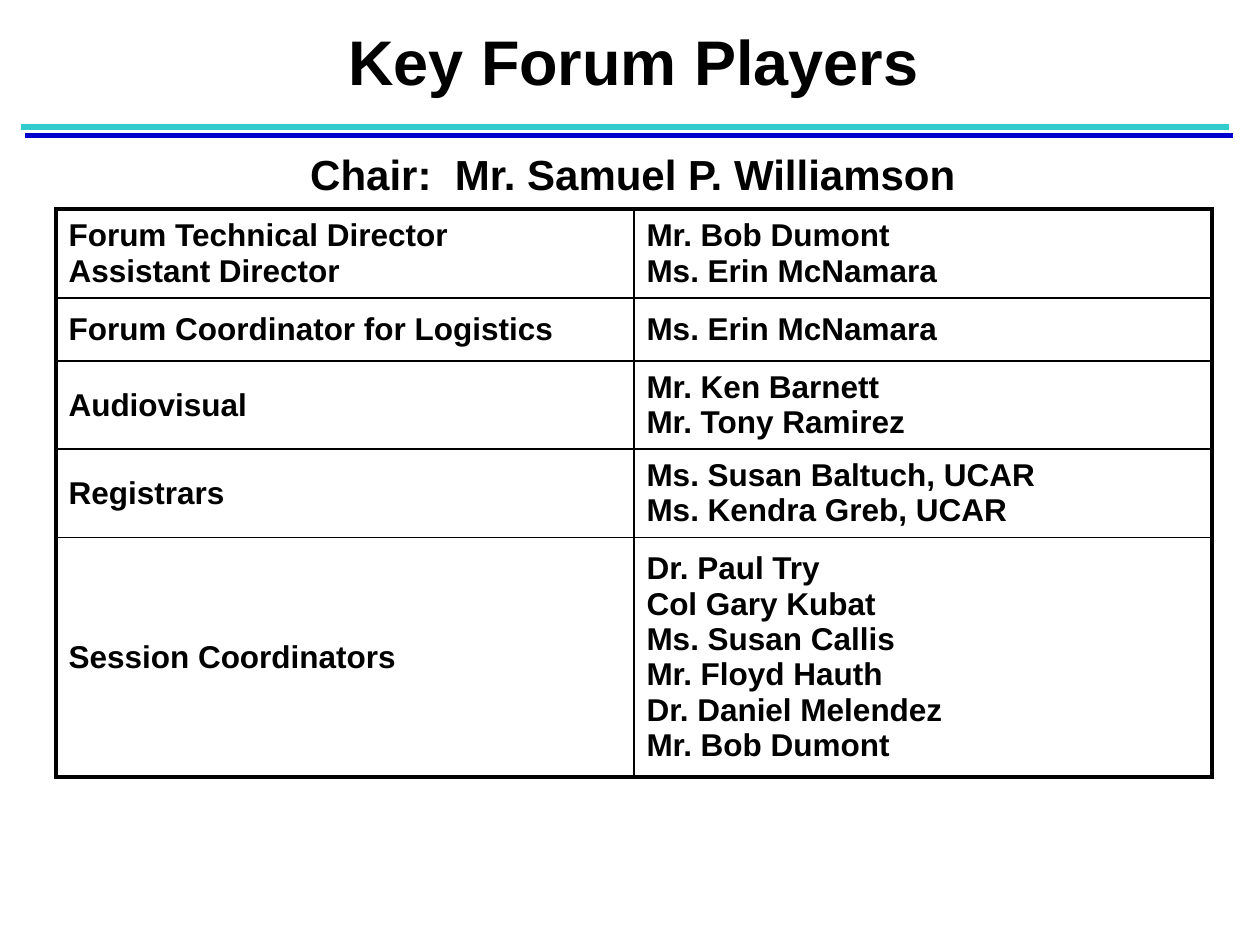
from pptx import Presentation, util as u
from pptx.dml.color import RGBColor
from pptx.enum import shapes, text
from pptx.oxml import parse_xml
from pptx.oxml.ns import nsdecls

px = u.Inches(1) / 126
theme = dict(font="Arial", ink="000000", rule="33CCCC", shade="0000CC",
             title=36, chair=24, body=18, thick=2.25, thin=1)


def style(frame, size, align):
    for para in frame.paragraphs:
        para.alignment = align
        for run in para.runs:
            font = run.font
            font.name, font.size, font.bold = theme["font"], u.Pt(size), True
            font.color.rgb = RGBColor.from_string(theme["ink"])


def emu(*vals):
    return [round(v * px) for v in vals]


deck = Presentation()
deck.slide_width, deck.slide_height = u.Inches(10), u.Inches(7.5)
slide = deck.slides.add_slide(deck.slide_layouts[6])

rule = slide.shapes.add_connector(shapes.MSO_CONNECTOR.STRAIGHT, *emu(21, 127, 1229, 127))
rule.line.width = u.Pt(3)
rule.line.color.rgb = RGBColor.from_string(theme["rule"])
rule._element.spPr.append(parse_xml(
    f'<a:effectLst {nsdecls("a")}><a:outerShdw dist="{u.Pt(5.4)}" dir="{68 * 60000}" '
    f'algn="ctr" rotWithShape="0"><a:srgbClr val="{theme["shade"]}"/></a:outerShdw></a:effectLst>'))

heads = [
    ("Key Forum Players", "title", (96, 28, 1075, 77), 0.85),
    ("Chair:  Mr. Samuel P. Williamson", "chair", (141, 142, 984, 64), 1.0),
]
for words, size, area, space in heads:
    frame = slide.shapes.add_textbox(*emu(*area)).text_frame
    frame.word_wrap = True
    frame.text = words
    frame.paragraphs[0].line_spacing = space
    style(frame, theme[size], text.PP_ALIGN.CENTER)

rows = [
    (89, "Forum Technical Director\nAssistant Director", "Mr. Bob Dumont\nMs. Erin McNamara"),
    (63, "Forum Coordinator for Logistics", "Ms. Erin McNamara"),
    (88, "Audiovisual", "Mr. Ken Barnett\nMr. Tony Ramirez"),
    (88, "Registrars", "Ms. Susan Baltuch, UCAR\nMs. Kendra Greb, UCAR"),
    (239, "Session Coordinators",
     "Dr. Paul Try\nCol Gary Kubat\nMs. Susan Callis\nMr. Floyd Hauth\n"
     "Dr. Daniel Melendez\nMr. Bob Dumont"),
]
high = sum(row[0] for row in rows)
grid = slide.shapes.add_table(len(rows), 2, *emu(56, 209, 1156, high)).table
grid.first_row = grid.horz_banding = False
for col in grid.columns:
    col.width = emu(578)[0]
for i, (tall, *names) in enumerate(rows):
    grid.rows[i].height = emu(tall)[0]
    for j, name in enumerate(names):
        cell = grid.cell(i, j)
        cell.text_frame.text = name
        cell.vertical_anchor = text.MSO_ANCHOR.MIDDLE
        cell.fill.background()
        style(cell.text_frame, theme["body"], text.PP_ALIGN.LEFT)
        outer = dict(L=j == 0, R=j == 1, T=i == 0, B=i == len(rows) - 1)
        for k, (side, edge) in enumerate(outer.items()):
            wide = u.Pt(theme["thick" if edge else "thin"])
            cell._tc.tcPr.insert(k, parse_xml(
                f'<a:ln{side} {nsdecls("a")} w="{wide}"><a:solidFill>'
                f'<a:srgbClr val="{theme["ink"]}"/></a:solidFill></a:ln{side}>'))

deck.save("out.pptx")
